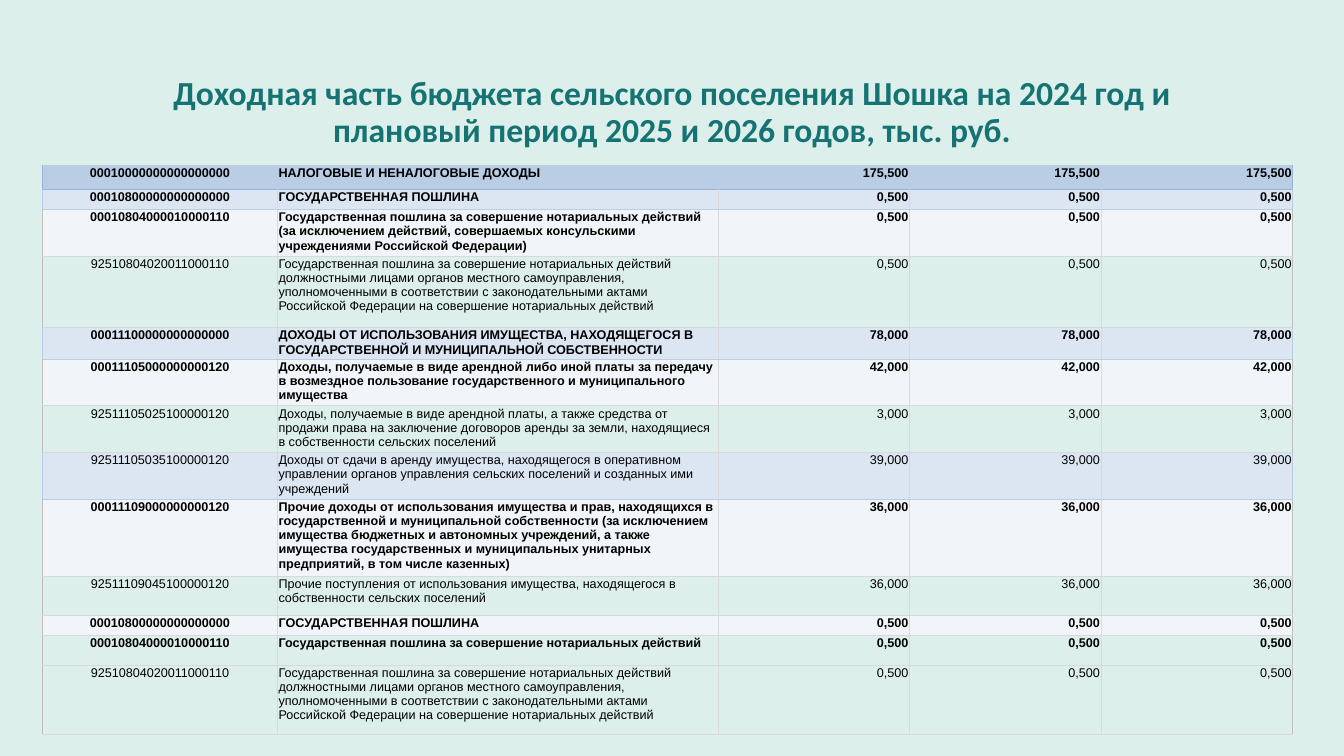
import dataclasses
from typing import Optional

import lxml.etree
import pptx
import pptx.dml.color
import pptx.enum.text
import pptx.oxml.ns
import pptx.util

Cm, Pt = pptx.util.Cm, pptx.util.Pt
ALIGN = pptx.enum.text.PP_ALIGN
ANCHOR = pptx.enum.text.MSO_ANCHOR
qn = pptx.oxml.ns.qn

GRID = "D9D9D9"


@dataclasses.dataclass(frozen=True)
class RowStyle:
    fill: Optional[str]
    edge: str
    bottom: str = GRID
    inner: Optional[str] = GRID
    bottom_width: float = 0.5


@dataclasses.dataclass(frozen=True)
class IncomeRow:
    height: float
    style: RowStyle
    bold: bool
    code: str
    name: str
    amount: str  # the same in all three years


TOTAL = RowStyle("B9CDE5", "95B3D7", "95B3D7", None, 1)
SECTION = RowStyle("DCE6F2", "B9CDE5", "B9CDE5")
GROUP = RowStyle("F1F5F9", "BFBFBF")
ITEM = RowStyle(None, "BFBFBF")

TITLE = ("Доходная часть бюджета сельского поселения Шошка на 2024 год и "
         "плановый период 2025 и 2026 годов, тыс. руб.")
NOTARY = "Государственная пошлина за совершение нотариальных действий"
NOTARY_LOCAL = (NOTARY + " должностными лицами органов местного самоуправления, "
                "уполномоченными в соответствии с законодательными актами "
                "Российской Федерации на совершение нотариальных действий")
ROWS = [
    IncomeRow(0.62, TOTAL, True, "00010000000000000000",
              "НАЛОГОВЫЕ И НЕНАЛОГОВЫЕ ДОХОДЫ", "175,500"),
    IncomeRow(0.5, SECTION, True, "00010800000000000000",
              "ГОСУДАРСТВЕННАЯ ПОШЛИНА", "0,500"),
    IncomeRow(1.1, GROUP, True, "00010804000010000110",
              NOTARY + " (за исключением действий, совершаемых консульскими "
              "учреждениями Российской Федерации)", "0,500"),
    IncomeRow(1.8, ITEM, False, "92510804020011000110", NOTARY_LOCAL, "0,500"),
    IncomeRow(0.74, SECTION, True, "00011100000000000000",
              "ДОХОДЫ ОТ ИСПОЛЬЗОВАНИЯ ИМУЩЕСТВА, НАХОДЯЩЕГОСЯ В "
              "ГОСУДАРСТВЕННОЙ И МУНИЦИПАЛЬНОЙ СОБСТВЕННОСТИ", "78,000"),
    IncomeRow(1.1, GROUP, True, "00011105000000000120",
              "Доходы, получаемые в виде арендной либо иной платы за передачу "
              "в возмездное пользование государственного и муниципального "
              "имущества", "42,000"),
    IncomeRow(1.1, ITEM, False, "92511105025100000120",
              "Доходы, получаемые в виде арендной платы, а также средства от "
              "продажи права на заключение договоров аренды за земли, "
              "находящиеся в собственности сельских поселений", "3,000"),
    IncomeRow(1.1, SECTION, False, "92511105035100000120",
              "Доходы от сдачи в аренду имущества, находящегося в оперативном "
              "управлении органов управления сельских поселений и созданных "
              "ими учреждений", "39,000"),
    IncomeRow(1.8, GROUP, True, "00011109000000000120",
              "Прочие доходы от использования имущества и прав, находящихся в "
              "государственной и муниципальной собственности (за исключением "
              "имущества бюджетных и автономных учреждений, а также имущества "
              "государственных и муниципальных унитарных предприятий, в том "
              "числе казенных)", "36,000"),
    IncomeRow(0.99, ITEM, False, "92511109045100000120",
              "Прочие поступления от использования имущества, находящегося в "
              "собственности сельских поселений", "36,000"),
    IncomeRow(0.5, GROUP, True, "00010800000000000000",
              "ГОСУДАРСТВЕННАЯ ПОШЛИНА", "0,500"),
    IncomeRow(0.75, ITEM, True, "00010804000010000110", NOTARY, "0,500"),
    IncomeRow(1.74, ITEM, False, "92510804020011000110", NOTARY_LOCAL, "0,500"),
]
COL_WIDTHS = [5.92, 11.1, 4.83, 4.83, 4.83]
COL_ALIGNS = [ALIGN.CENTER, ALIGN.LEFT] + [ALIGN.RIGHT] * 3


def rgb(color: str) -> pptx.dml.color.RGBColor:
    return pptx.dml.color.RGBColor.from_string(color)


def format_text(p, font: str, size: float, color: str, bold: bool, align) -> None:
    p.alignment = align
    for r in p.runs:
        r.font.name, r.font.size, r.font.bold = font, Pt(size), bold
        r.font.color.rgb = rgb(color)


def add_border(cell, side: str, color: Optional[str], width: float = 0.5) -> None:
    tc_pr = cell._tc.get_or_add_tcPr()
    ln = lxml.etree.SubElement(tc_pr, qn("a:ln" + side), w=str(Pt(width)))
    if color is None:
        lxml.etree.SubElement(ln, qn("a:noFill"))
    else:
        fill = lxml.etree.SubElement(ln, qn("a:solidFill"))
        lxml.etree.SubElement(fill, qn("a:srgbClr"), val=color)


def draw_cell(cell, text: str, col: int, row: IncomeRow,
              above: Optional[RowStyle]) -> None:
    style = row.style
    # Borders come before the fill in the cell properties
    add_border(cell, "L", style.edge if col == 0 else style.inner)
    add_border(cell, "R", style.edge if col == len(COL_WIDTHS) - 1 else style.inner)
    if above:
        add_border(cell, "T", above.bottom, above.bottom_width)
    else:
        add_border(cell, "T", None)
    add_border(cell, "B", style.bottom, style.bottom_width)
    if style.fill:
        cell.fill.solid()
        cell.fill.fore_color.rgb = rgb(style.fill)
    else:
        cell.fill.background()
    cell.margin_left = cell.margin_right = cell.margin_top = Cm(0.03)
    cell.margin_bottom = 0
    cell.vertical_anchor = ANCHOR.TOP
    cell.text_frame.text = text
    format_text(cell.text_frame.paragraphs[0], "Arial", 9, "000000", row.bold,
                COL_ALIGNS[col])


def add_title(s) -> None:
    sp = s.shapes.add_textbox(Cm(2.33), Cm(1.01), Cm(29.21), Cm(3.68))
    tf = sp.text_frame
    tf.word_wrap = True
    tf.vertical_anchor = ANCHOR.MIDDLE
    tf.text = TITLE
    p = tf.paragraphs[0]
    p.line_spacing = 0.9
    format_text(p, "Calibri", 24, "167373", True, ALIGN.CENTER)


def add_income_table(s) -> None:
    frame = s.shapes.add_table(len(ROWS), len(COL_WIDTHS), Cm(1.07), Cm(4.15),
                               Cm(sum(COL_WIDTHS)), Cm(sum(r.height for r in ROWS)))
    table = frame.table
    table.first_row = table.horz_banding = False
    for column, width in zip(table.columns, COL_WIDTHS):
        column.width = Cm(width)
    above = None
    for i, row in enumerate(ROWS):
        table.rows[i].height = Cm(row.height)
        for col, text in enumerate([row.code, row.name] + [row.amount] * 3):
            draw_cell(table.cell(i, col), text, col, row, above)
        above = row.style


def main() -> None:
    prs = pptx.Presentation()
    prs.slide_width, prs.slide_height = Cm(33.87), Cm(19.05)
    s = prs.slides.add_slide(prs.slide_layouts[6])
    # Background
    s.background.fill.solid()
    s.background.fill.fore_color.rgb = rgb("DCEFEB")
    # Title and table
    add_title(s)
    add_income_table(s)
    prs.save("out.pptx")


if __name__ == "__main__":
    main()
